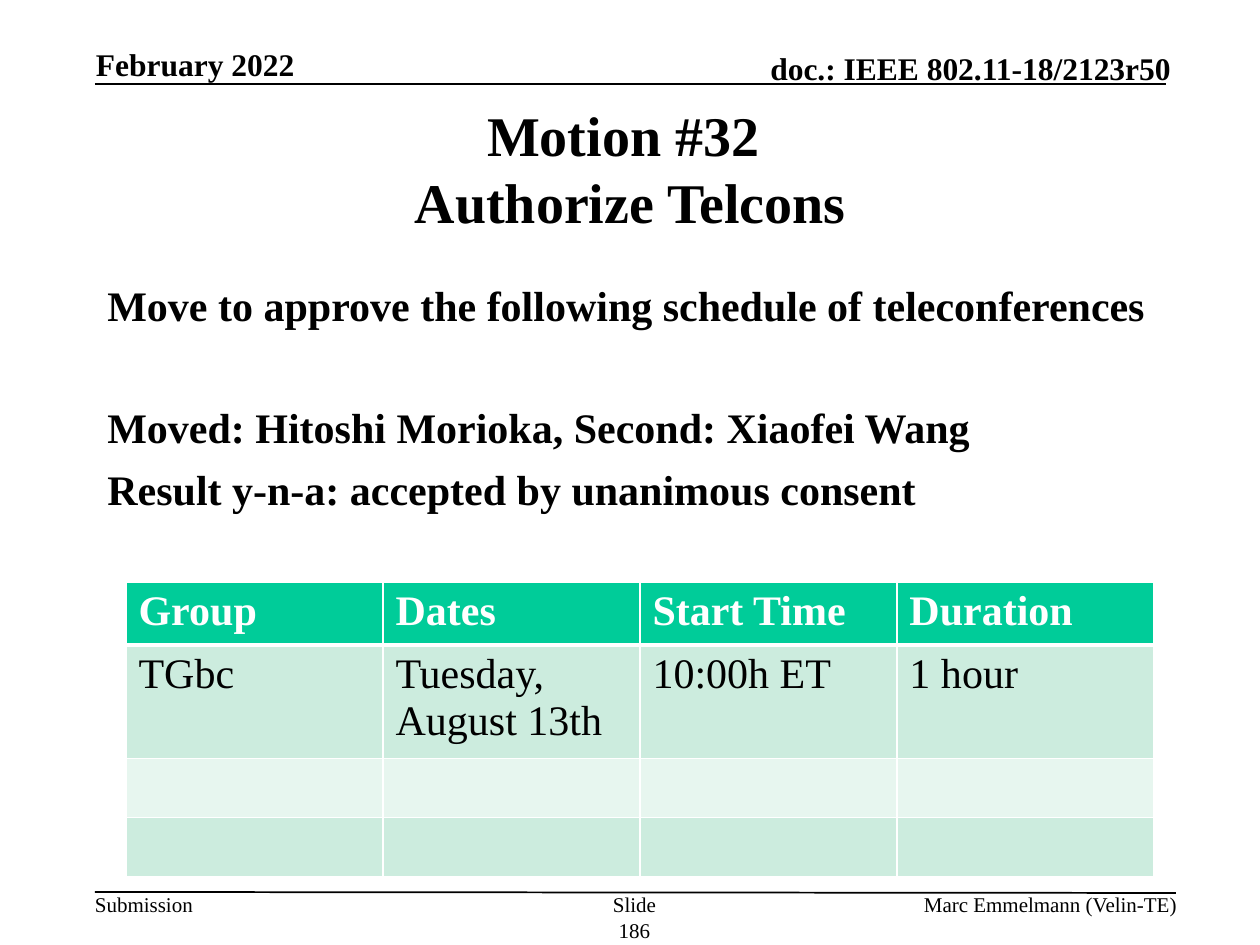
from dataclasses import dataclass
from lxml.etree import SubElement
from pptx import Presentation
from pptx.dml.color import RGBColor as Color
from pptx.enum.shapes import MSO_CONNECTOR as Connector
from pptx.enum.text import MSO_ANCHOR as Anchor, MSO_AUTO_SIZE as AutoSize, PP_ALIGN as Align
from pptx.oxml.ns import qn
from pptx.util import Pt


@dataclass(frozen=True)
class Theme:
    font: str = "Times New Roman"
    black: Color = Color(0, 0, 0)
    white: Color = Color(255, 255, 255)
    header: Color = Color.from_string("00CC99")
    band: Color = Color.from_string("CCECDE")
    light_band: Color = Color.from_string("E7F6EF")
    title_size: int = 32
    body_size: int = 24
    header_size: int = 18
    footer_size: int = 12


theme = Theme()
PX = 914400 / 126


def px(*lengths):
    return [round(length * PX) for length in lengths]


def write(paragraph, text, size, bold=False, color=theme.black, **layout):
    paragraph.text = text
    for name, value in layout.items():
        setattr(paragraph, name, value)
    for run in paragraph.runs:
        for name, value in {"name": theme.font, "size": Pt(size), "bold": bold}.items():
            setattr(run.font, name, value)
        run.font.color.rgb = color


presentation = Presentation()
presentation.slide_width, presentation.slide_height = px(1260, 945)
slide = presentation.slides.add_slide(presentation.slide_layouts[5])
shapes = slide.shapes

for ends in [(95, 84, 1166, 84), (95, 892, 1176, 893)]:
    rule = shapes.add_connector(Connector.STRAIGHT, *px(*ends))
    rule.line.color.rgb = theme.black
    rule.line.width = Pt(1)
    SubElement(rule._element.spPr, qn("a:effectLst"))

title = shapes.title
title.left, title.top, title.width, title.height = px(95, 95, 1071, 146)
title_format = {"vertical_anchor": Anchor.MIDDLE, "auto_size": AutoSize.NONE, "word_wrap": True}
for name, value in title_format.items():
    setattr(title.text_frame, name, value)
write(title.text_frame.paragraphs[0], "Motion #32 \vAuthorize Telcons", theme.title_size, True,
      alignment=Align.CENTER, line_spacing=Pt(38.4))

labels = [
    ("February 2022", (96, 45, 258, 38), theme.header_size, True, Align.LEFT, Anchor.BOTTOM),
    ("doc.: IEEE 802.11-18/2123r50", (689, 49, 482, 38), theme.header_size, True, Align.RIGHT, Anchor.BOTTOM),
    ("Submission", (95, 892, 98, 25), theme.footer_size, False, Align.LEFT, Anchor.TOP),
    ("Slide 186", (598, 892, 73, 50), theme.footer_size, False, Align.CENTER, Anchor.TOP),
    ("Marc Emmelmann (Velin-TE)", (738, 892, 439, 25), theme.footer_size, False, Align.RIGHT, Anchor.TOP),
]
for text, place, size, bold, alignment, anchor in labels:
    frame = shapes.add_textbox(*px(*place)).text_frame
    frame_format = {"word_wrap": text != "Submission", "vertical_anchor": anchor, "margin_left": 0,
                    "margin_top": 0, "margin_right": 0, "margin_bottom": 0}
    for name, value in frame_format.items():
        setattr(frame, name, value)
    write(frame.paragraphs[0], text, size, bold, alignment=alignment)

motion = [
    ("Move to approve the following schedule of teleconferences", 0),
    ("Moved: Hitoshi Morioka, Second: Xiaofei Wang", 41),
    ("Result y-n-a: accepted by unanimous consent", 6),
]
body = shapes.add_textbox(*px(95, 273, 1071, 252)).text_frame
body.word_wrap = True
hanging = px(48)[0]
for index, (text, gap) in enumerate(motion):
    paragraph = body.add_paragraph() if index else body.paragraphs[0]
    properties = paragraph._p.get_or_add_pPr()
    properties.set("marL", str(hanging))
    properties.set("indent", str(-hanging))
    write(paragraph, text, theme.body_size, True, line_spacing=Pt(29), space_before=Pt(gap))

schedule = [
    ["Group", "Dates", "Start Time", "Duration"],
    ["TGbc", "Tuesday, August 13th", "10:00h ET", "1 hour"],
    [""] * 4,
    [""] * 4,
]
row_heights = [59, 105, 59, 59]
row_fills = [theme.header, theme.band, theme.light_band, theme.band]
table = shapes.add_table(4, 4, *px(126, 582, 1028, sum(row_heights))).table
table.horz_banding = False
for column in table.columns:
    column.width = px(257)[0]
for row_index, values in enumerate(schedule):
    table.rows[row_index].height = px(row_heights[row_index])[0]
    is_header = row_index == 0
    for column_index, text in enumerate(values):
        cell = table.cell(row_index, column_index)
        cell_properties = cell._tc.get_or_add_tcPr()
        thick_side = {0: "lnB", 1: "lnT"}.get(row_index)
        for side in ("lnL", "lnR", "lnT", "lnB"):
            width = Pt(3 if side == thick_side else 1)
            border = SubElement(cell_properties, qn(f"a:{side}"), w=str(width))
            border_fill = SubElement(border, qn("a:solidFill"))
            SubElement(border_fill, qn("a:srgbClr"), val=str(theme.white))
        cell.fill.solid()
        cell.fill.fore_color.rgb = row_fills[row_index]
        if text:
            write(cell.text_frame.paragraphs[0], text, theme.body_size, is_header,
                  theme.white if is_header else theme.black)

presentation.save("out.pptx")
